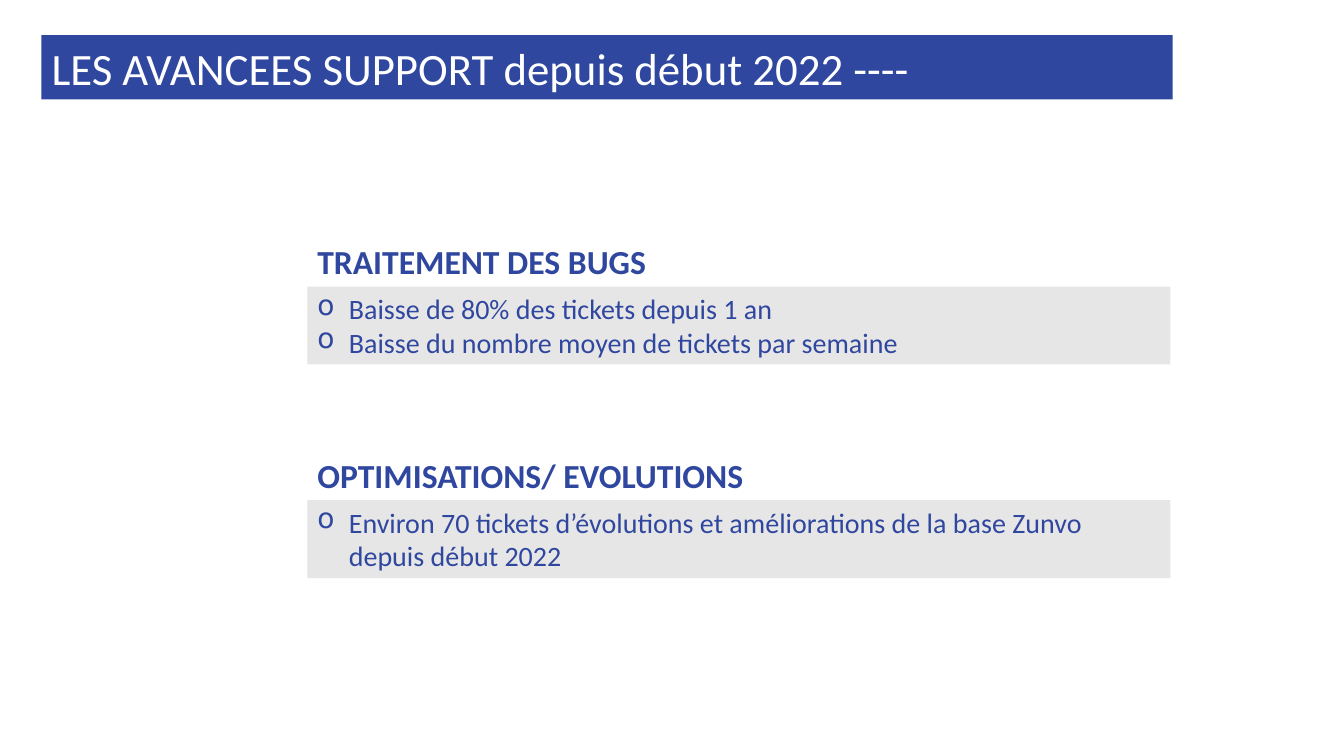
from lxml.etree import SubElement
from pptx import Presentation
from pptx.dml.color import RGBColor
from pptx.enum.shapes import MSO_SHAPE
from pptx.enum.text import MSO_ANCHOR, PP_ALIGN
from pptx.oxml.ns import qn
from pptx.util import Pt

BLUE = "2F479E"
GREY = "E7E6E6"
WHITE = "FFFFFF"
HEADING_HEIGHT = 36
PANEL_HEIGHT = 55.6
BULLET_INDENT = 22.5

SECTIONS = [
    ("TRAITEMENT DES BUGS", 251.5, [
        "Baisse de 80% des tickets depuis 1 an",
        "Baisse du nombre moyen de tickets par semaine",
    ]),
    ("OPTIMISATIONS/ EVOLUTIONS", 322, [
        "Environ 70 tickets d’évolutions et améliorations de la base Zunvo depuis début 2022",
    ]),
]


def color(value):
    return RGBColor.from_string(value)


def paint(shape, value):
    shape.fill.solid()
    shape.fill.fore_color.rgb = color(value)


def write(para, text, size=20, ink=BLUE, bold=False, bullet=None):
    para.alignment = PP_ALIGN.LEFT
    span = para.add_run()
    span.text = text
    span.font.name = "Calibri"
    span.font.size = Pt(size)
    span.font.bold = bold
    span.font.color.rgb = color(ink)
    if bullet:
        properties = para._p.get_or_add_pPr()
        properties.set("marL", str(Pt(BULLET_INDENT)))
        properties.set("indent", str(-Pt(BULLET_INDENT)))
        SubElement(properties, qn("a:buChar"), char=bullet)


def add_title(page, left, top, width, height):
    title = page.shapes.title
    title.left, title.top = Pt(left), Pt(top)
    title.width, title.height = Pt(width), Pt(height)
    paint(title, BLUE)
    title.text_frame.vertical_anchor = MSO_ANCHOR.MIDDLE
    write(title.text_frame.paragraphs[0],
          "LES AVANCEES SUPPORT depuis début 2022 ----", size=32, ink=WHITE)


def add_section(page, left, top, width, heading, heading_width, items):
    box = page.shapes.add_textbox(Pt(left), Pt(top), Pt(heading_width), Pt(HEADING_HEIGHT))
    box.text_frame.word_wrap = False
    write(box.text_frame.paragraphs[0], heading, size=24, bold=True)

    panel = page.shapes.add_shape(MSO_SHAPE.RECTANGLE, Pt(left), Pt(top + HEADING_HEIGHT),
                                  Pt(width), Pt(PANEL_HEIGHT))
    paint(panel, GREY)
    panel.line.fill.background()
    panel.shadow.inherit = False
    frame = panel.text_frame
    frame.word_wrap = True
    frame.vertical_anchor = MSO_ANCHOR.TOP
    for index, item in enumerate(items):
        para = frame.add_paragraph() if index else frame.paragraphs[0]
        write(para, item, bullet="o")


def main():
    deck = Presentation()
    deck.slide_width, deck.slide_height = Pt(960), Pt(540)
    page = deck.slides.add_slide(deck.slide_layouts[5])
    add_title(page, left=29.6, top=25, width=808, height=46)
    for index, (heading, heading_width, items) in enumerate(SECTIONS):
        add_section(page, 219.6, 168.7 + index * 152.6, 616.4, heading, heading_width, items)
    deck.save("out.pptx")


if __name__ == "__main__":
    main()
